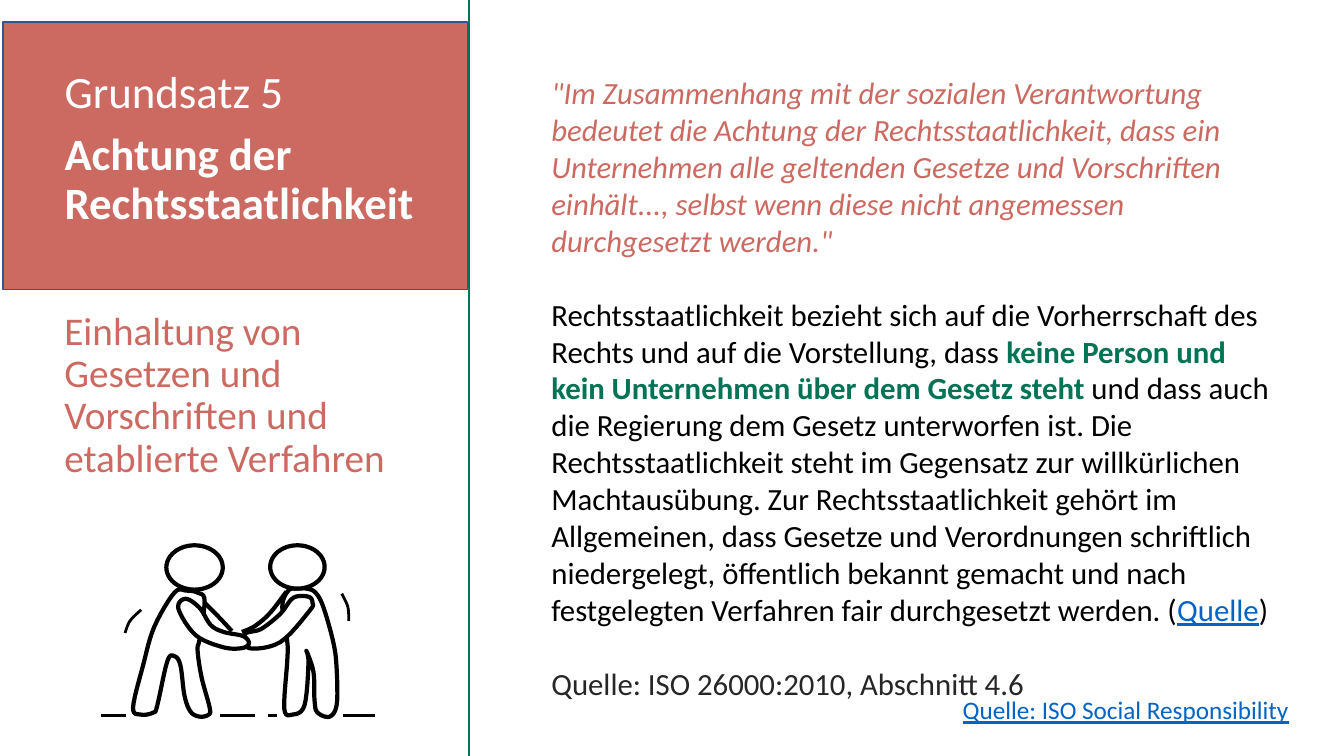
"""Build the slide on principle 5, respect for the rule of law."""
from pptx import Presentation
from pptx.dml.color import RGBColor
from pptx.enum.shapes import MSO_CONNECTOR as Connector, MSO_SHAPE as Shape
from pptx.enum.text import MSO_ANCHOR as Anchor, MSO_AUTO_SIZE as AutoSize, PP_ALIGN as Align
from pptx.oxml.ns import qn
from pptx.util import Pt

PX = 9144
CORAL = RGBColor(0xCC, 0x6A, 0x62)
BLUE = RGBColor(0x32, 0x54, 0x91)
GREEN = RGBColor(0x02, 0x73, 0x54)
LINK = RGBColor(0x05, 0x63, 0xC1)
DARK = RGBColor(0x26, 0x26, 0x26)
BLACK = RGBColor(0, 0, 0)
WHITE = RGBColor(255, 255, 255)

QUOTE = {"size": Pt(22), "color": CORAL, "italic": True}
BODY = {"size": Pt(22), "color": BLACK}
STRONG = {**BODY, "color": GREEN, "bold": True}
BODY_LINK = {**BODY, "color": LINK, "underline": True}
SOURCE = {"size": Pt(22), "color": DARK}
FOOT_LINK = {"size": Pt(18), "color": LINK, "underline": True}
HEADING = {"size": Pt(32), "color": WHITE, "bold": False}
HEADING_BOLD = {**HEADING, "bold": True}
SUBTITLE = {"size": Pt(28), "color": CORAL}

EXPLANATION = [
    [('"Im Zusammenhang mit der sozialen Verantwortung bedeutet die Achtung der '
      'Rechtsstaatlichkeit, dass ein Unternehmen alle geltenden Gesetze und Vorschriften '
      'einhält..., selbst wenn diese nicht angemessen durchgesetzt werden."', QUOTE)],
    [("Rechtsstaatlichkeit bezieht sich auf die Vorherrschaft des Rechts und auf die "
      "Vorstellung, dass ", BODY),
     ("keine Person und kein Unternehmen über dem Gesetz steht ", STRONG),
     ("und dass auch die Regierung dem Gesetz unterworfen ist. Die Rechtsstaatlichkeit steht "
      "im Gegensatz zur willkürlichen Machtausübung. Zur Rechtsstaatlichkeit gehört im "
      "Allgemeinen, dass Gesetze und Verordnungen schriftlich niedergelegt, öffentlich bekannt "
      "gemacht und nach festgelegten Verfahren fair durchgesetzt werden. (", BODY),
     ("Quelle", BODY_LINK), (")", BODY)],
    [("Quelle: ISO 26000:2010, Abschnitt 4.6", SOURCE)],
]

RIGHT_BODY = [(196, 56), (204, 54), (214, 54), (223, 58), (231, 73), (241, 109), (244, 135),
              (244, 169), (237, 181), (225, 177), (222, 165), (221, 137), (214, 116),
              (216, 128), (212, 170), (200, 179), (192, 173), (195, 125), (195, 107), (190, 72)]
LEFT_BODY = [(83, 58), (63, 92), (52, 130), (42, 172), (50, 179), (62, 177), (66, 170),
             (76, 126), (83, 121), (89, 130), (93, 160), (99, 176), (108, 181), (117, 179),
             (118, 172), (110, 142), (106, 115), (108, 104), (113, 66), (106, 58), (95, 56)]
RIGHT_ARM = [(220, 68), (216, 62), (201, 63), (188, 79), (169, 94), (153, 99), (157, 113),
             (188, 107), (217, 76)]
LEFT_ARM = [(157, 108), (151, 101), (132, 97), (119, 90), (108, 73), (94, 64), (87, 74),
            (104, 100), (131, 112), (150, 113)]
FAR_ARMS = [[(194, 57), (178, 78), (163, 91), (150, 97)], [(113, 68), (125, 80), (140, 96)]]
MOTION = [[(34, 98), (39, 86), (50, 75)], [(249, 59), (255, 72), (256, 86)]]
HEADS = [(75, 11, 56, 44), (178, 11, 54, 43)]
GROUND = [(10, 35), (128, 163), (176, 185), (250, 282)]
GROUND_Y = 180


def emu(*lengths):
    """Turn px lengths into EMU."""
    return [round(length * PX) for length in lengths]


def fill_text(frame, paragraphs, margins=(10, 5, 10, 5), gap=0, spacing=1.0):
    """Write paragraphs of formatted runs into a wrapped text frame."""
    frame.word_wrap = True
    frame.auto_size = AutoSize.NONE
    frame.vertical_anchor = Anchor.TOP
    for side, margin in zip(("left", "top", "right", "bottom"), emu(*margins)):
        setattr(frame, f"margin_{side}", margin)
    for index, runs in enumerate(paragraphs):
        paragraph = frame.paragraphs[0] if index == 0 else frame.add_paragraph()
        paragraph.alignment = Align.LEFT
        paragraph.line_spacing = spacing
        paragraph.space_before = Pt(gap if index else 0)
        for text, style in runs:
            run = paragraph.add_run()
            run.text = text
            run.font.name = "Calibri"
            for name, value in style.items():
                if name == "color":
                    run.font.color.rgb = value
                else:
                    setattr(run.font, name, value)


def add_text(slide, box, paragraphs, **layout):
    """Add a text box at the given box."""
    fill_text(slide.shapes.add_textbox(*emu(*box)).text_frame, paragraphs, **layout)


def paint(shape, fill, line, width):
    """Set fill and outline of a shape and drop its shadow."""
    shape.shadow.inherit = False
    if fill is None:
        shape.fill.background()
    else:
        shape.fill.solid()
        shape.fill.fore_color.rgb = fill
    shape.line.color.rgb = line
    shape.line.width = Pt(width)


def add_line(slide, start, end, color, width):
    """Add a straight line without shadow."""
    line = slide.shapes.add_connector(Connector.STRAIGHT, *emu(*start, *end))
    line.line.color.rgb = color
    line.line.width = Pt(width)
    properties = line._element.spPr
    properties.append(properties.makeelement(qn("a:effectLst"), {}))


def smooth_points(points, closed, steps=6):
    """Return points on a Catmull-Rom curve through the given points."""
    count = len(points)
    curve = [points[0]]
    for index in range(count if closed else count - 1):
        near = [index + offset for offset in (-1, 0, 1, 2)]
        a, b, c, d = (points[i % count if closed else min(max(i, 0), count - 1)] for i in near)
        for step in range(1, steps + 1):
            t = step / steps
            curve.append(tuple(
                (2 * q + (r - p) * t + (2 * p - 5 * q + 4 * r - s) * t ** 2
                 + (3 * q - p - 3 * r + s) * t ** 3) / 2
                for p, q, r, s in zip(a, b, c, d)))
    return curve


def add_curve(slide, origin, points, fill=None, width=3):
    """Draw a smooth outline, closed when it has a fill."""
    left, top = origin
    closed = fill is not None
    curve = [emu(left + x, top + y) for x, y in smooth_points(points, closed)]
    builder = slide.shapes.build_freeform(*curve[0])
    builder.add_line_segments(curve[1:], close=closed)
    paint(builder.convert_to_shape(), fill, BLACK, width)


def add_heading(slide, box):
    """Turn the title placeholder into the coloured heading panel."""
    title = slide.shapes.title
    title.left, title.top, title.width, title.height = emu(*box)
    title.fill.solid()
    title.fill.fore_color.rgb = CORAL
    title.line.color.rgb = BLUE
    title.line.width = Pt(1)
    fill_text(title.text_frame,
              [[("Grundsatz 5", HEADING)], [("Achtung der Rechtsstaatlichkeit", HEADING_BOLD)]],
              margins=(61, 47, 33, 5), gap=10, spacing=0.9)


def add_handshake(slide, origin):
    """Draw two figures shaking hands on the ground line."""
    left, top = origin
    for outline in (RIGHT_BODY, LEFT_BODY):
        add_curve(slide, origin, outline, WHITE)
    for stroke in FAR_ARMS:
        add_curve(slide, origin, stroke)
    for outline in (RIGHT_ARM, LEFT_ARM):
        add_curve(slide, origin, outline, WHITE)
    for x, y, width, height in HEADS:
        head = slide.shapes.add_shape(Shape.OVAL, *emu(left + x, top + y, width, height))
        paint(head, WHITE, BLACK, 3)
    for stroke in MOTION:
        add_curve(slide, origin, stroke, width=2)
    for start, end in GROUND:
        add_line(slide, (left + start, top + GROUND_Y), (left + end, top + GROUND_Y), BLACK, 2)


def main():
    """Build and save the presentation."""
    presentation = Presentation()
    presentation.slide_width, presentation.slide_height = emu(1333, 750)
    slide = presentation.slides.add_slide(presentation.slide_layouts[5])
    add_line(slide, (465, 0), (465, 750), GREEN, 1)
    add_heading(slide, (3, 22, 461, 265))
    add_text(slide, (537, 68, 742, 640), EXPLANATION, gap=26.5)
    add_text(slide, (54, 304, 387, 190),
             [[("Einhaltung von Gesetzen und Vorschriften und etablierte Verfahren", SUBTITLE)]],
             spacing=0.9)
    add_handshake(slide, (90, 530))
    add_text(slide, (945, 684, 362, 40), [[("Quelle: ISO Social Responsibility", FOOT_LINK)]])
    presentation.save("out.pptx")


if __name__ == "__main__":
    main()
